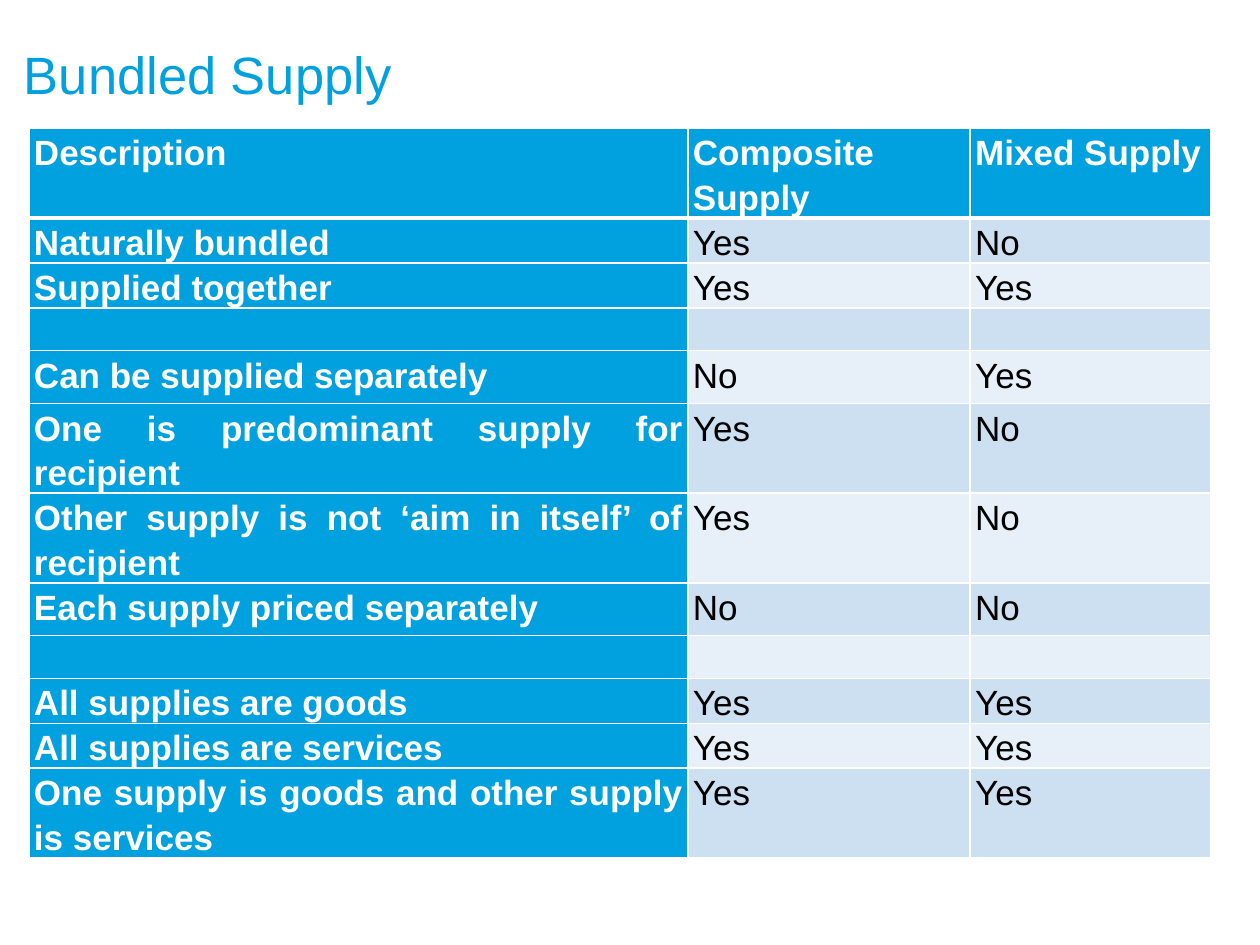
from pptx import Presentation
from pptx.dml.color import RGBColor
from pptx.enum import text as t
from pptx.oxml import parse_xml
from pptx.oxml.ns import nsdecls
from pptx.util import Inches, Pt

BLUE, WHITE, BLACK = "00A1DE", "FFFFFF", "000000"
BANDS = ("CCE0F2", "E7F0F9")
COLS = (5.23, 2.24, 1.91)
LOW, HIGH = 0.34, 0.42
ROWS = [
    (HIGH, "Description", "Composite Supply", "Mixed Supply"),
    (LOW, "Naturally bundled", "Yes", "No"),
    (LOW, "Supplied together", "Yes", "Yes"),
    (LOW, "", "", ""),
    (HIGH, "Can be supplied separately", "No", "Yes"),
    (HIGH, "One is predominant supply for recipient", "Yes", "No"),
    (HIGH, "Other supply is not ‘aim in itself’ of recipient", "Yes", "No"),
    (HIGH, "Each supply priced separately", "No", "No"),
    (LOW, "", "", ""),
    (LOW, "All supplies are goods", "Yes", "Yes"),
    (LOW, "All supplies are services", "Yes", "Yes"),
    (HIGH, "One supply is goods and other supply is services", "Yes", "Yes"),
]


def rgb(code):
    return RGBColor.from_string(code)


def assign(item, form):
    for name, value in form.items():
        setattr(item, name, value)


def write(para, words, size, color, bold=False):
    run = para.add_run()
    run.text = words
    assign(run.font, dict(name="Arial", size=Pt(size), bold=bold))
    run.font.color.rgb = rgb(color)


def add_title(slide, box, words):
    frame = slide.shapes.add_textbox(*map(Inches, box)).text_frame
    assign(frame, dict(
        word_wrap=True, vertical_anchor=t.MSO_ANCHOR.MIDDLE,
        margin_left=Inches(0.19), margin_right=0, margin_top=0,
        margin_bottom=Inches(0.09)))
    write(frame.paragraphs[0], words, 30, BLUE)


def set_edges(cell, widths):
    props = cell._tc.get_or_add_tcPr()
    for spot, (side, width) in enumerate(widths.items()):
        props.insert(spot, parse_xml(
            f'<a:ln{side} {nsdecls("a")} w="{Pt(width)}"><a:solidFill>'
            f'<a:srgbClr val="{WHITE}"/></a:solidFill></a:ln{side}>'))


def fill_cell(cell, words, row, col):
    head = row == 0 or col == 0
    assign(cell, dict(margin_left=Inches(0.04), margin_right=Inches(0.04),
                      margin_top=0, margin_bottom=0))
    cell.fill.solid()
    cell.fill.fore_color.rgb = rgb(BLUE if head else BANDS[(row - 1) % 2])
    # The heavier rule lies between the header and the first row
    set_edges(cell, dict(L=1, R=1, T=3 if row == 1 else 1, B=3 if row == 0 else 1))
    para = cell.text_frame.paragraphs[0]
    assign(para, dict(alignment=t.PP_ALIGN.JUSTIFY, line_spacing=Pt(25.6)))
    if words:
        write(para, words, 20, WHITE if head else BLACK, head)
    else:
        # An empty cell keeps the height of a text line
        para._p.append(parse_xml(f'<a:endParaRPr {nsdecls("a")} sz="2000"/>'))


def add_grid(slide, box):
    table = slide.shapes.add_table(len(ROWS), len(COLS), *map(Inches, box)).table
    assign(table, dict(first_row=True, first_col=True, horz_banding=True))
    for col, width in enumerate(COLS):
        table.columns[col].width = Inches(width)
    for row, (height, *cells) in enumerate(ROWS):
        table.rows[row].height = Inches(height)
        for col, words in enumerate(cells):
            fill_cell(table.cell(row, col), words, row, col)


def main():
    deck = Presentation()
    assign(deck, dict(slide_width=Inches(10), slide_height=Inches(7.5)))
    slide = deck.slides.add_slide(deck.slide_layouts[6])
    # Heading
    add_title(slide, (0, 0.32, 9.17, 0.61), "Bundled Supply")
    # Comparison of the two kinds of supply
    add_grid(slide, (0.23, 1.02, sum(COLS), sum(row[0] for row in ROWS)))
    deck.save("out.pptx")


if __name__ == "__main__":
    main()
